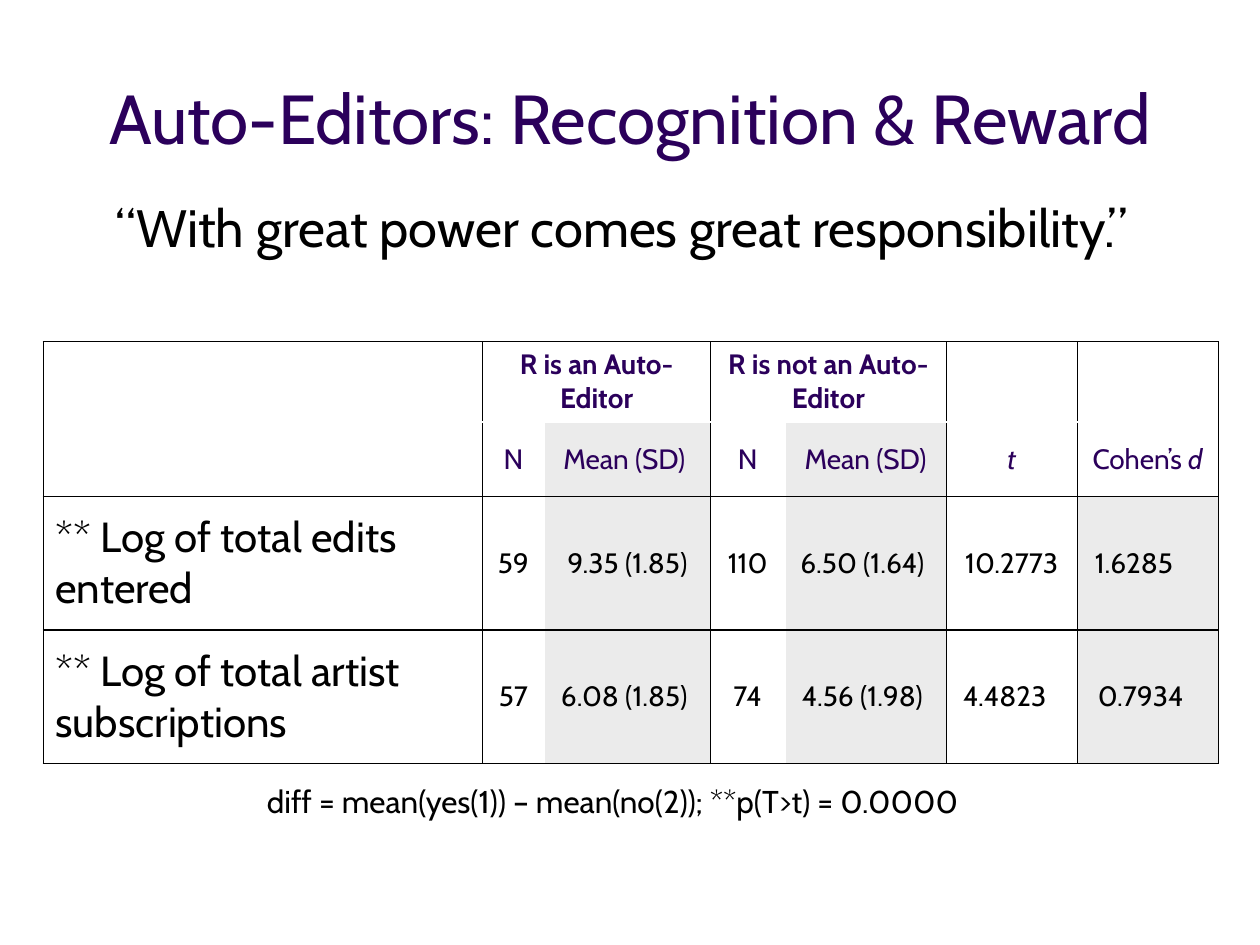
import pptx
import pptx.dml.color
import pptx.enum.text
import pptx.oxml
import pptx.oxml.ns
import pptx.util
from pptx.util import Inches

RGBColor = pptx.dml.color.RGBColor
Align = pptx.enum.text.PP_ALIGN
Anchor = pptx.enum.text.MSO_ANCHOR

PURPLE = RGBColor(0x2B, 0x00, 0x5B)
BLACK = RGBColor(0x00, 0x00, 0x00)
WHITE = RGBColor(0xFF, 0xFF, 0xFF)
GRAY = RGBColor(0xD9, 0xD9, 0xD9)
FONT = "Cabin"
HAIRLINE = (BLACK, 0.25)
RULE = (BLACK, 1)
HIDDEN = (WHITE, 1)

COLUMN_WIDTHS = [3.49, 0.49, 1.32, 0.59, 1.28, 1.04, 1.12]
ROW_HEIGHTS = [0.64, 0.59, 1.06, 1.06]
N_COLUMNS = (1, 3)
MEAN_COLUMNS = (2, 4)
EFFECT_COLUMN = 6
HEADER_ROWS = 2

ROWS = [
    ["", "R is an Auto-Editor", "", "R is not an Auto-Editor", "", "", ""],
    ["", "N", "Mean (SD) ", "N", "Mean (SD)", "t", "Cohen’s d"],
    ["** Log of total edits entered", "59", "9.35 (1.85)", "110",
     "6.50 (1.64) ", "10.2773", "1.6285"],
    ["** Log of total artist subscriptions", "57", "6.08 (1.85) ", "74",
     "4.56 (1.98) ", "4.4823", "0.7934"],
]
# Wider right margins pull these centred values to the left
RIGHT_MARGINS = {(2, 6): 0.32, (3, 5): 0.21, (3, 6): 0.21}


def write_text(para, text, size=16, color=BLACK, bold=False, italic=False,
               align=Align.LEFT):
    """Add one formatted run to a paragraph."""
    para.alignment = align
    span = para.add_run()
    span.text = text
    font = span.font
    font.name, font.size, font.color.rgb = FONT, pptx.util.Pt(size), color
    font.bold, font.italic = bold, italic


def set_border(cell, side, line):
    """Draw one side (L, R, T or B) of a cell as (colour, points)."""
    color, points = line
    cell._tc.get_or_add_tcPr().append(pptx.oxml.parse_xml(
        f'<a:ln{side} {pptx.oxml.ns.nsdecls("a")} w="{pptx.util.Pt(points)}">'
        f'<a:solidFill><a:srgbClr val="{color}"/></a:solidFill></a:ln{side}>'))


def set_fill(cell, color, alpha=100):
    cell.fill.solid()
    cell.fill.fore_color.rgb = color
    if alpha < 100:
        tint = cell._tc.tcPr.find(".//" + pptx.oxml.ns.qn("a:solidFill")
                                  + "[last()]")
        tint = cell._tc.tcPr.findall(pptx.oxml.ns.qn("a:solidFill"))[-1][0]
        tint.append(pptx.oxml.parse_xml(
            f'<a:alpha {pptx.oxml.ns.nsdecls("a")} val="{alpha * 1000}"/>'))


class SlideBuilder:
    """Holds the current slide and adds its elements."""

    def __init__(self, deck):
        self.page = deck.slides.add_slide(deck.slide_layouts[6])

    def text(self, left, top, width, height, text, wrap=False,
             anchor=Anchor.TOP, **style):
        box = self.page.shapes.add_textbox(
            Inches(left), Inches(top), Inches(width), Inches(height))
        box.text_frame.word_wrap = wrap
        box.text_frame.vertical_anchor = anchor
        write_text(box.text_frame.paragraphs[0], text, **style)

    def table(self, left, top):
        frame = self.page.shapes.add_table(
            len(ROW_HEIGHTS), len(COLUMN_WIDTHS), Inches(left), Inches(top),
            Inches(sum(COLUMN_WIDTHS)), Inches(sum(ROW_HEIGHTS)))
        grid = frame.table
        grid.first_row = grid.horz_banding = False
        for column, width in zip(grid.columns, COLUMN_WIDTHS):
            column.width = Inches(width)
        for row, height in zip(grid.rows, ROW_HEIGHTS):
            row.height = Inches(height)
        for row, texts in enumerate(ROWS):
            for column, text in enumerate(texts):
                cell = grid.cell(row, column)
                self.cell_lines(cell, row, column)
                self.cell_fill(cell, row, column)
                self.cell_text(cell, row, column, text)
        # Merged header cells
        grid.cell(0, 0).merge(grid.cell(1, 0))
        for column in N_COLUMNS:
            grid.cell(0, column).merge(grid.cell(0, column + 1))

    def cell_lines(self, cell, row, column):
        open_right = row > 0 and column in N_COLUMNS
        open_left = row > 0 and column in MEAN_COLUMNS
        set_border(cell, "L", HIDDEN if open_left else HAIRLINE)
        set_border(cell, "R", HIDDEN if open_right else HAIRLINE)
        if row == 0:
            set_border(cell, "T", HAIRLINE)
        elif row >= HEADER_ROWS:
            set_border(cell, "T", RULE)
        if row == len(ROWS) - 1:
            set_border(cell, "B", HAIRLINE)
        elif row > 0 or column == 0:
            set_border(cell, "B", RULE)

    def cell_fill(self, cell, row, column):
        shaded = (row > 0 and column in MEAN_COLUMNS
                  or row >= HEADER_ROWS and column == EFFECT_COLUMN)
        if shaded:
            set_fill(cell, GRAY, alpha=50)
        else:
            set_fill(cell, WHITE)

    def cell_text(self, cell, row, column, text):
        cell.vertical_anchor = Anchor.MIDDLE
        if (row, column) in RIGHT_MARGINS:
            cell.margin_right = Inches(RIGHT_MARGINS[row, column])
        if not text:
            return
        para = cell.text_frame.paragraphs[0]
        if row >= HEADER_ROWS:
            if column == 0:
                write_text(para, text, size=24)
            else:
                write_text(para, text, align=Align.CENTER)
            return
        # Statistic symbols (t, d) are italic
        symbol = text[-1] if text in ("t", "Cohen’s d") else ""
        label = text.removesuffix(symbol)
        for part, italic in ((label, False), (symbol, True)):
            if part:
                write_text(para, part, color=PURPLE, bold=row == 0,
                           italic=italic, align=Align.CENTER)


def main():
    deck = pptx.Presentation()
    deck.slide_width, deck.slide_height = Inches(10), Inches(7.5)
    slide = SlideBuilder(deck)

    # Title
    slide.text(0.34, 0.3, 9.32, 1.25, "Auto-Editors: Recognition & Reward",
               wrap=True, anchor=Anchor.MIDDLE, size=39.6, color=PURPLE,
               align=Align.CENTER)
    # Comparison table
    slide.table(0.34, 2.71)
    # Footnote and quotation
    slide.text(2.02, 6.16, 5.95, 0.71,
               "diff = mean(yes(1)) – mean(no(2)); **p(T>t) = 0.0000", size=18)
    slide.text(0.82, 1.5, 8.36, 0.61,
               "“With great power comes great responsibility.”", size=30)

    deck.save("out.pptx")


if __name__ == "__main__":
    main()
